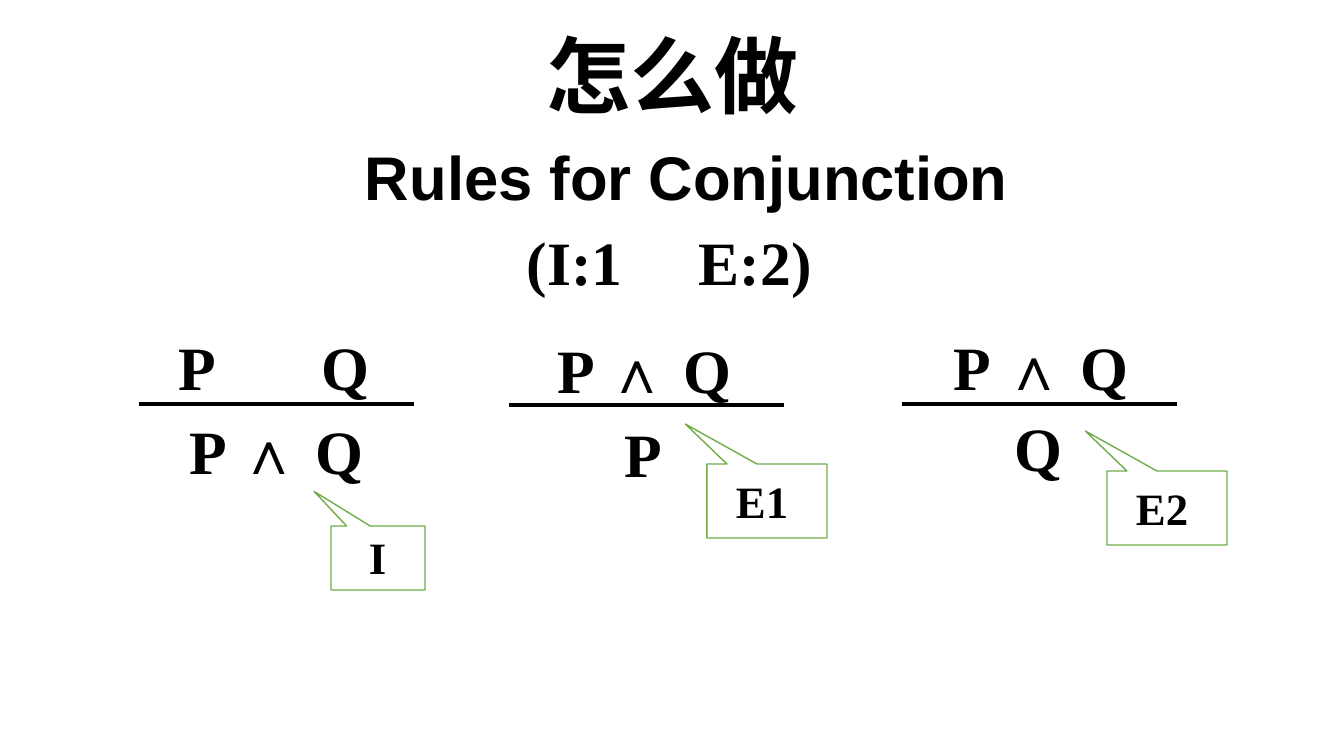
"""Build a slide on the introduction and elimination rules for conjunction."""
import pptx
import pptx.dml.color
import pptx.enum.shapes
import pptx.enum.text
import pptx.oxml.ns
import pptx.util
from lxml import etree

PX = 914400 / 100.8
ALIGN = pptx.enum.text.PP_ALIGN
ANCHOR = pptx.enum.text.MSO_ANCHOR
FIT = pptx.enum.text.MSO_AUTO_SIZE
INSET = 10
THEME = {
    "ink": pptx.dml.color.RGBColor.from_string("000000"),
    "paper": pptx.dml.color.RGBColor.from_string("FFFFFF"),
    "callout": pptx.dml.color.RGBColor.from_string("70AD47"),
    "heading": {"name": "Noto Sans CJK SC", "size": pptx.util.Pt(60), "bold": True},
    "title": {"name": "Arial", "size": pptx.util.Pt(44), "bold": True},
    "formula": {"name": "Times New Roman", "size": pptx.util.Pt(44), "bold": True},
    "label": {"name": "Times New Roman", "size": pptx.util.Pt(32), "bold": True},
}


def px(*lengths):
    """Turn pixel lengths into EMU."""
    return [pptx.util.Emu(round(length * PX)) for length in lengths]


def write(shape, text, style, align=ALIGN.LEFT, anchor=ANCHOR.TOP,
          fit=FIT.SHAPE_TO_FIT_TEXT, spacing=None, indent=0, tab=None):
    """Fill a shape with one formatted line of text."""
    frame = shape.text_frame
    frame_format = {"word_wrap": True, "auto_size": fit, "vertical_anchor": anchor,
                    "margin_left": px(INSET + indent)[0]}
    for name, value in frame_format.items():
        setattr(frame, name, value)
    paragraph = frame.paragraphs[0]
    paragraph.alignment = align
    if spacing:
        paragraph.line_spacing = spacing
    if tab:
        properties = paragraph._p.get_or_add_pPr()
        tabs = etree.SubElement(properties, pptx.oxml.ns.qn("a:tabLst"))
        etree.SubElement(tabs, pptx.oxml.ns.qn("a:tab"), pos=str(px(tab)[0]), algn="l")
    run = paragraph.add_run()
    run.text = text
    for name, value in THEME[style].items():
        setattr(run.font, name, value)
    run.font.color.rgb = THEME["ink"]
    if style == "heading":
        etree.SubElement(run._r.get_or_add_rPr(), pptx.oxml.ns.qn("a:ea"),
                         typeface=THEME[style]["name"])


presentation = pptx.Presentation()
presentation.slide_width, presentation.slide_height = px(1344, 756)
slide = presentation.slides.add_slide(presentation.slide_layouts[0])
shapes = slide.shapes

subtitle = slide.placeholders[1]
subtitle.element.getparent().remove(subtitle.element)
title = shapes.title
title.left, title.top, title.width, title.height = px(183, 127, 1008, 92)
centred = {"align": ALIGN.CENTER, "fit": FIT.NONE, "spacing": 0.9}
write(title, "Rules for Conjunction", "title", anchor=ANCHOR.BOTTOM, **centred)

heading = shapes.add_textbox(*px(93, 7, 1159, 146))
write(heading, "怎么做", "heading", anchor=ANCHOR.MIDDLE, **centred)

rule_count = shapes.add_textbox(*px(395, 219, 549, 85))
write(rule_count, "(I:1\tE:2)", "formula", indent=122, tab=172)

rules = [
    {"bar": (139, 404),
     "premise": ("P\tQ", 169, 324, 214, {"tab": 143}),
     "conclusion": ("P ∧ Q", 179, 408, 198, {}),
     "callout": (331, 526, 94, 64),
     "label": ("I", 359, 525, 59)},
    {"bar": (509, 405),
     "premise": ("P ∧ Q", 547, 327, 198, {}),
     "conclusion": ("P", 614, 411, 78, {}),
     "callout": (707, 464, 120, 74),
     "label": ("E1", 726, 469, 90)},
    {"bar": (902, 404),
     "premise": ("P ∧ Q", 944, 324, 198, {}),
     "conclusion": ("Q", 990, 405, 119, {"indent": 15}),
     "callout": (1107, 471, 120, 74),
     "label": ("E2", 1126, 476, 90)},
]

for rule in rules:
    callout = shapes.add_shape(
        pptx.enum.shapes.MSO_SHAPE.RECTANGULAR_CALLOUT, *px(*rule["callout"]))
    callout.shadow.inherit = False
    callout.adjustments[0], callout.adjustments[1] = -0.68, -1.04
    callout.fill.solid()
    callout.fill.fore_color.rgb = THEME["paper"]
    callout.line.color.rgb = THEME["callout"]
    callout.line.width = pptx.util.Pt(1)

    text, left, top, width = rule["label"]
    write(shapes.add_textbox(*px(left, top, width, 65)), text, "label")

    left, top = rule["bar"]
    bar = shapes.add_connector(
        pptx.enum.shapes.MSO_CONNECTOR.STRAIGHT, *px(left, top, left + 275, top))
    bar.line.color.rgb = THEME["ink"]
    bar.line.width = pptx.util.Pt(3.25)
    etree.SubElement(bar.element.spPr, pptx.oxml.ns.qn("a:effectLst"))

    for part in ("premise", "conclusion"):
        text, left, top, width, layout = rule[part]
        write(shapes.add_textbox(*px(left, top, width, 85)), text, "formula", **layout)

presentation.save("out.pptx")
